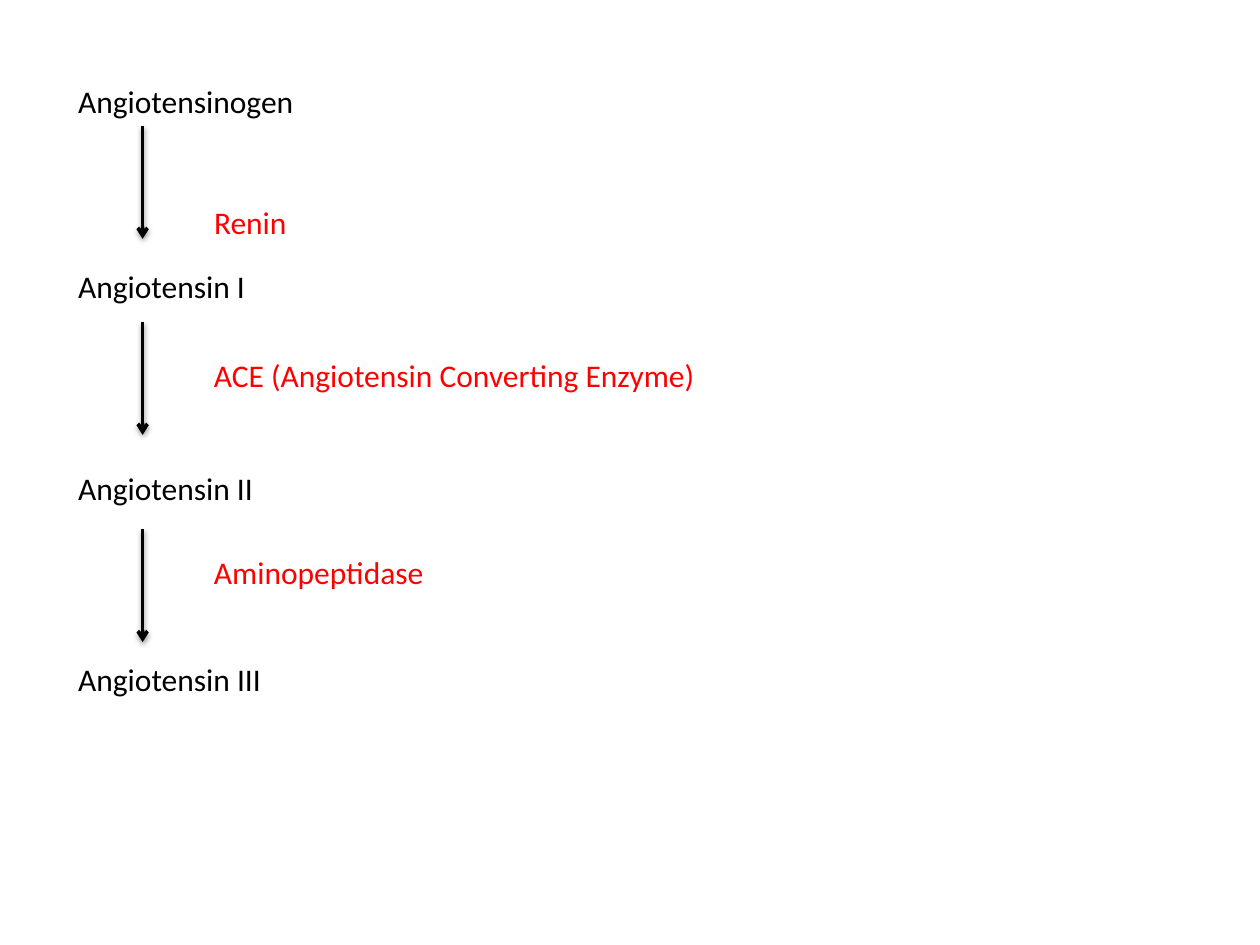
from dataclasses import dataclass

from lxml.etree import SubElement
from pptx import Presentation
from pptx.dml.color import RGBColor
from pptx.enum.shapes import MSO_CONNECTOR
from pptx.enum.text import MSO_AUTO_SIZE
from pptx.oxml.ns import qn
from pptx.shapes.connector import Connector
from pptx.slide import Slide
from pptx.util import Pt


@dataclass(frozen=True)
class Theme:
    font: str = "Calibri"
    size: float = 18
    peptide: RGBColor = RGBColor(0, 0, 0)
    enzyme: RGBColor = RGBColor(255, 0, 0)
    arrow: RGBColor = RGBColor(0, 0, 0)
    arrow_width: float = 2


@dataclass(frozen=True)
class Label:
    text: str
    top: float
    width: float


THEME = Theme()
PEPTIDE_LEFT, ENZYME_LEFT, ARROW_X = 37.6, 115.2, 81.5
LABEL_HEIGHT, ARROW_LENGTH = 29, 64.5

PEPTIDES = [
    Label("Angiotensinogen", 43.2, 139),
    Label("Angiotensin I", 149.3, 111),
    Label("Angiotensin II", 264.3, 116),
    Label("Angiotensin III", 373.7, 120),
]
ENZYMES = [
    Label("Renin", 112.4, 57),
    Label("ACE (Angiotensin Converting Enzyme)", 200, 293),
    Label("Aminopeptidase", 312.5, 135.5),
]
ARROW_TOPS = [72, 184, 302.4]


def add_label(s: Slide, label: Label, left: float, color: RGBColor) -> None:
    sp = s.shapes.add_textbox(Pt(left), Pt(label.top), Pt(label.width), Pt(LABEL_HEIGHT))
    tf = sp.text_frame
    tf.text = label.text
    tf.word_wrap = False
    tf.auto_size = MSO_AUTO_SIZE.SHAPE_TO_FIT_TEXT
    font = tf.paragraphs[0].runs[0].font
    font.name, font.size = THEME.font, Pt(THEME.size)
    font.color.rgb = color


def add_shadow(line: Connector) -> None:
    """Give the line a soft black shadow straight below it."""
    effects = SubElement(line._element.spPr, qn("a:effectLst"))
    shadow = SubElement(
        effects, qn("a:outerShdw"), blurRad=str(Pt(3.1)), dist=str(Pt(1.6)),
        dir="5400000", rotWithShape="0",
    )
    color = SubElement(shadow, qn("a:srgbClr"), val="000000")
    SubElement(color, qn("a:alpha"), val="38000")


def add_arrow(s: Slide, top: float) -> None:
    line = s.shapes.add_connector(
        MSO_CONNECTOR.STRAIGHT, Pt(ARROW_X), Pt(top), Pt(ARROW_X), Pt(top + ARROW_LENGTH)
    )
    line.line.color.rgb = THEME.arrow
    line.line.width = Pt(THEME.arrow_width)
    SubElement(line.line._get_or_add_ln(), qn("a:tailEnd"), type="arrow")
    add_shadow(line)


def main() -> None:
    prs = Presentation()
    prs.slide_width, prs.slide_height = Pt(720), Pt(540)
    s = prs.slides.add_slide(prs.slide_layouts[6])
    for peptide in PEPTIDES:
        add_label(s, peptide, PEPTIDE_LEFT, THEME.peptide)
    for top in ARROW_TOPS:
        add_arrow(s, top)
    for enzyme in ENZYMES:
        add_label(s, enzyme, ENZYME_LEFT, THEME.enzyme)
    prs.save("out.pptx")


if __name__ == "__main__":
    main()
